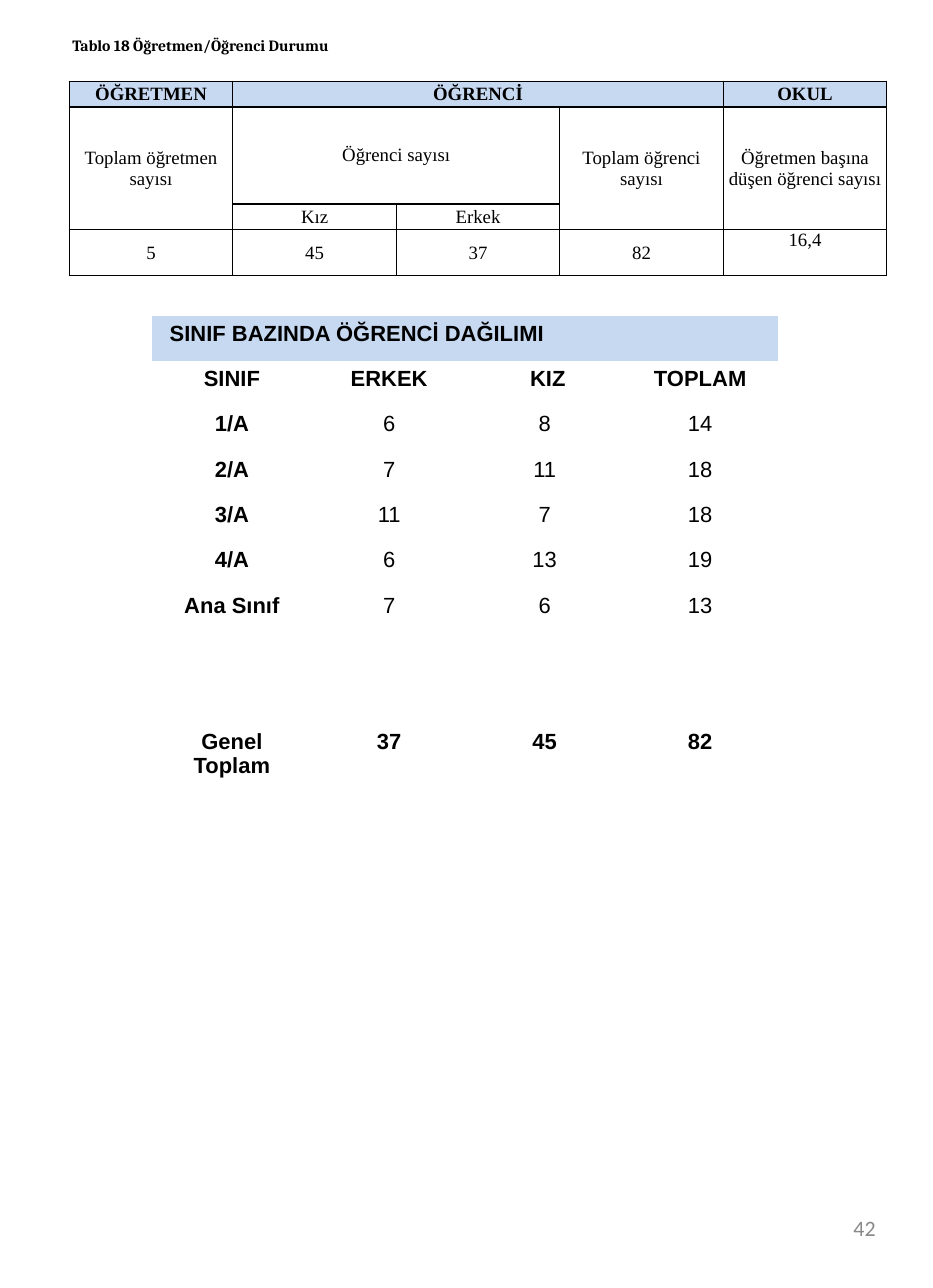
from dataclasses import dataclass

from lxml import etree
from pptx import Presentation
from pptx.dml.color import RGBColor
from pptx.enum import text
from pptx.oxml import ns
from pptx.util import Cm, Pt

MID, TOP = text.MSO_ANCHOR.MIDDLE, text.MSO_ANCHOR.TOP
LEFT, CENTER, RIGHT = text.PP_ALIGN.LEFT, text.PP_ALIGN.CENTER, text.PP_ALIGN.RIGHT
PLAIN = "{2D5ABB26-0587-4C30-8999-92F81FD0307C}"


@dataclass(frozen=True)
class Font:
    name: str
    size: int
    color: str = "000000"


@dataclass(frozen=True)
class Theme:
    head: str = "C6D9F1"
    body: str = "FFFFFF"
    line: str = "000000"
    title: Font = Font("Cambria", 10)
    staff: Font = Font("Times New Roman", 12)
    grade: Font = Font("Arial", 14)
    page: Font = Font("Calibri", 14, "898989")


class Sheet:
    def __init__(self, slide, theme):
        self.slide, self.theme = slide, theme

    def add_run(self, frame, words, font, bold=False, align=LEFT):
        para = frame.paragraphs[0]
        para.alignment = align
        run = para.add_run()
        run.text = words
        run.font.name, run.font.size, run.font.bold = font.name, Pt(font.size), bold
        run.font.color.rgb = RGBColor.from_string(font.color)
        return para

    def label(self, place, words, font, bold=False, align=LEFT, anchor=TOP, indent=0):
        frame = self.slide.shapes.add_textbox(*map(Cm, place)).text_frame
        frame.word_wrap, frame.vertical_anchor = True, anchor
        para = self.add_run(frame, words, font, bold, align)
        if indent:
            para._p.get_or_add_pPr().set("marL", str(Cm(indent)))

    def table(self, left, top, cols, rows, spans):
        place = map(Cm, (left, top, sum(cols), sum(rows)))
        grid = self.slide.shapes.add_table(len(rows), len(cols), *place).table
        grid.first_row = grid.horz_banding = False
        grid._tbl.tblPr.find(ns.qn("a:tableStyleId")).text = PLAIN
        for col, width in zip(grid.columns, cols):
            col.width = Cm(width)
        for row, height in zip(grid.rows, rows):
            row.height = Cm(height)
        for start, end in spans:
            grid.cell(*start).merge(grid.cell(*end))
        return grid

    def cell(self, cell, words, font, fill, bold=False, align=CENTER,
             anchor=TOP, pad=None, edge=False):
        if edge:
            self.border(cell)
        cell.fill.solid()
        cell.fill.fore_color.rgb = RGBColor.from_string(fill)
        cell.vertical_anchor = anchor
        if pad is not None:
            (cell.margin_left, cell.margin_right,
             cell.margin_top, cell.margin_bottom) = map(Cm, pad)
        if words:
            self.add_run(cell.text_frame, words, font, bold, align)

    def border(self, cell):
        props = cell._tc.get_or_add_tcPr()
        for side in ("lnL", "lnR", "lnT", "lnB"):
            line = etree.SubElement(props, ns.qn("a:" + side), w=str(Pt(1)))
            fill = etree.SubElement(line, ns.qn("a:solidFill"))
            etree.SubElement(fill, ns.qn("a:srgbClr"), val=self.theme.line)


STAFF = [
    ["ÖĞRETMEN", "ÖĞRENCİ", "", "", "OKUL"],
    ["Toplam öğretmen sayısı", "Öğrenci sayısı", "", "Toplam öğrenci sayısı",
     "Öğretmen başına düşen öğrenci sayısı"],
    ["", "Kız", "Erkek", "", ""],
    ["5", "45", "37", "82", "16,4"],
]
GRADES = [
    ["SINIF BAZINDA ÖĞRENCİ DAĞILIMI", "", "", ""],
    ["SINIF", "ERKEK", "KIZ", "TOPLAM"],
    ["1/A", "6", "8", "14"],
    ["2/A", "7", "11", "18"],
    ["3/A", "11", "7", "18"],
    ["4/A", "6", "13", "19"],
    ["Ana Sınıf", "7", "6", "13"],
    [""] * 4,
    [""] * 4,
    ["Genel Toplam", "37", "45", "82"],
]


def main():
    deck = Presentation()
    deck.slide_width, deck.slide_height = Cm(21), Cm(29)
    theme = Theme()
    sheet = Sheet(deck.slides.add_slide(deck.slide_layouts[6]), theme)

    # Page number
    sheet.label((15.06, 26.87, 4.9, 1.55), "42", theme.page, align=RIGHT, anchor=MID)

    # Teacher and student table
    grid = sheet.table(1.56, 1.83, [3.68] * 5, [0.58, 2.18, 0.58, 1.04],
                       [((0, 1), (0, 3)), ((1, 0), (2, 0)), ((1, 1), (1, 2)),
                        ((1, 3), (2, 3)), ((1, 4), (2, 4))])
    for r, row in enumerate(STAFF):
        for c, words in enumerate(row):
            sheet.cell(grid.cell(r, c), words, theme.staff,
                       theme.body if r else theme.head, bold=r == 0,
                       anchor=TOP if words == "16,4" else MID,
                       pad=(0, 0, 0, 0), edge=True)

    # Table title
    sheet.label((-0.3, 0.69, 17.35, 0.69), "Tablo 18 Öğretmen/Öğrenci Durumu",
                theme.title, bold=True, indent=1.68)

    # Students by class
    grid = sheet.table(3.43, 7.11, [3.58] + [3.5] * 3, [1.02] * 9 + [1.42],
                       [((0, 0), (0, 3))])
    last = len(GRADES) - 1
    for r, row in enumerate(GRADES):
        for c, words in enumerate(row):
            shift = r == 0 or words == "KIZ"
            sheet.cell(grid.cell(r, c), words, theme.grade,
                       theme.body if r else theme.head,
                       bold=c == 0 or r in (1, last),
                       align=CENTER if r else LEFT,
                       pad=(0.39, 0.25, 0.13, 0.13) if shift else None)

    deck.save("out.pptx")


if __name__ == "__main__":
    main()
